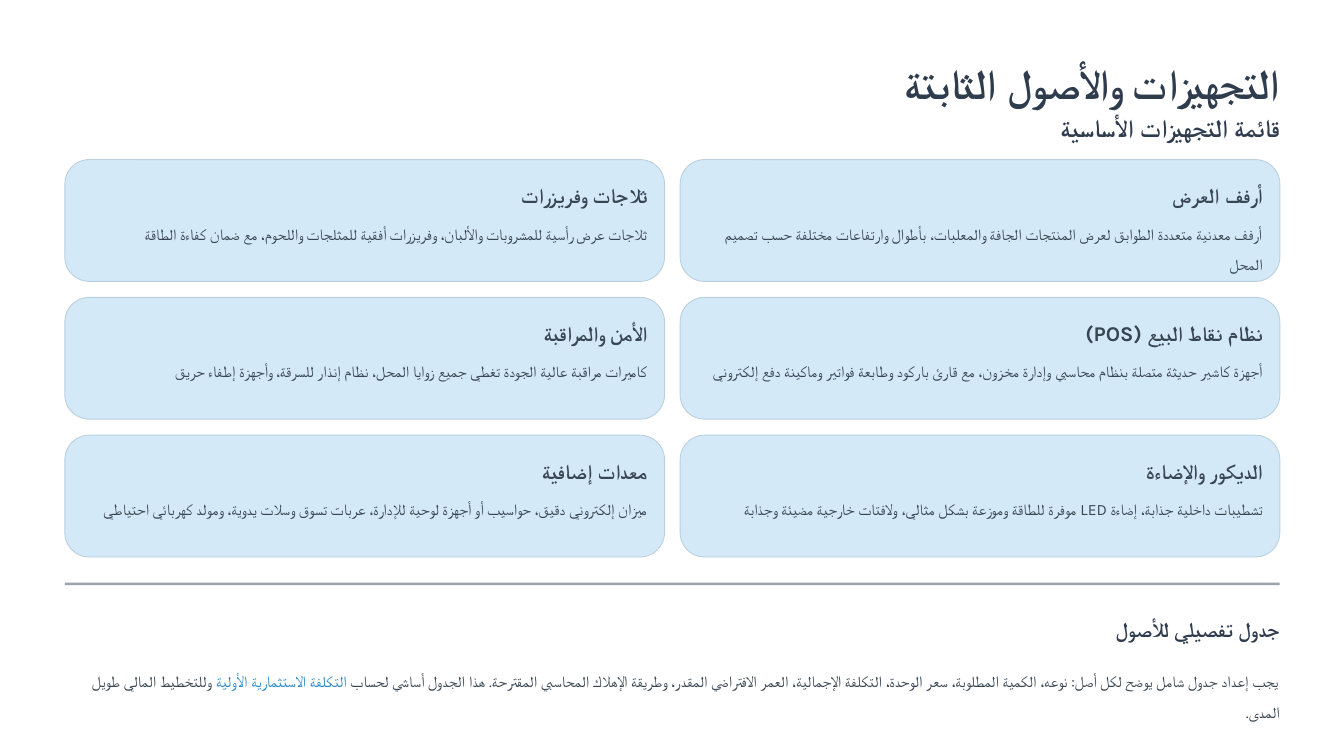
"""Build the fixed assets and equipment slide, laid out right to left."""
from dataclasses import dataclass

from lxml.etree import SubElement
from pptx import Presentation
from pptx.dml.color import RGBColor
from pptx.enum.shapes import MSO_SHAPE as Shape
from pptx.enum.text import MSO_ANCHOR as Anchor, MSO_AUTO_SIZE as AutoSize, PP_ALIGN as Align
from pptx.oxml.ns import qn
from pptx.util import Pt


@dataclass(frozen=True)
class Theme:
    font: str = "Karla"
    heading: RGBColor = RGBColor(0x2E, 0x3C, 0x4E)
    text: RGBColor = RGBColor(0x38, 0x46, 0x53)
    link: RGBColor = RGBColor(0x25, 0x89, 0xC9)
    card: RGBColor = RGBColor(0xD4, 0xE9, 0xF7)
    border: RGBColor = RGBColor(0xBA, 0xCF, 0xDD)
    title_size: float = 36
    subtitle_size: float = 21.5
    label_size: float = 18
    body_size: float = 13.5


THEME = Theme()


def write(box, spans, size, bold=False, spacing=1.25):
    """Fill a box with one right-to-left paragraph of (text, colour) spans."""
    frame = box.text_frame
    frame.word_wrap = True
    frame.auto_size = AutoSize.NONE
    frame.vertical_anchor = Anchor.TOP
    frame.margin_left = frame.margin_right = frame.margin_top = frame.margin_bottom = 0
    para = frame.paragraphs[0]
    para.alignment = Align.RIGHT
    para.line_spacing = spacing
    para.space_before = Pt(0)
    para._p.get_or_add_pPr().set("rtl", "1")
    for text, colour in spans:
        span = para.add_run()
        span.text = text
        span.font.size = Pt(size)
        span.font.bold = bold
        span.font.name = THEME.font
        span.font.color.rgb = colour
        SubElement(span._r.get_or_add_rPr(), qn("a:cs")).set("typeface", THEME.font)


def add_plain_shape(kind, left, top, width, height, colour):
    """Add a filled shape without shadow or outline."""
    shape = page.shapes.add_shape(kind, Pt(left), Pt(top), Pt(width), Pt(height))
    shape.shadow.inherit = False
    shape.fill.solid()
    shape.fill.fore_color.rgb = colour
    shape.line.fill.background()
    return shape


deck = Presentation()
deck.slide_width, deck.slide_height = Pt(1152), Pt(648)
page = deck.slides.add_slide(deck.slide_layouts[5])

LEFT, RIGHT = 55.6, 1097
CARD_WIDTH, CARD_HEIGHT, CARD_TOP = 514, 104.4, 136.8
ROW_STEP = 118.1
PADDING = 14.6
LABEL_WIDTH, LABEL_HEIGHT = 182, 23
BODY_HEIGHT = 44

title = page.shapes.title
title.left, title.top, title.width, title.height = Pt(RIGHT - CARD_WIDTH), Pt(38.2), Pt(CARD_WIDTH), Pt(45.4)
write(title, [("التجهيزات والأصول الثابتة", THEME.heading)], THEME.title_size, True)

subtitle = page.shapes.add_textbox(Pt(RIGHT - 367), Pt(89.3), Pt(367), Pt(27.4))
write(subtitle, [("قائمة التجهيزات الأساسية", THEME.heading)], THEME.subtitle_size, True, 1.26)

equipment = [
    ("أرفف العرض", "أرفف معدنية متعددة الطوابق لعرض المنتجات الجافة والمعلبات، بأطوال وارتفاعات مختلفة حسب تصميم المحل"),
    ("ثلاجات وفريزرات", "ثلاجات عرض رأسية للمشروبات والألبان، وفريزرات أفقية للمثلجات واللحوم، مع ضمان كفاءة الطاقة"),
    ("نظام نقاط البيع (POS)", "أجهزة كاشير حديثة متصلة بنظام محاسبي وإدارة مخزون، مع قارئ باركود وطابعة فواتير وماكينة دفع إلكتروني"),
    ("الأمن والمراقبة", "كاميرات مراقبة عالية الجودة تغطي جميع زوايا المحل، نظام إنذار للسرقة، وأجهزة إطفاء حريق"),
    ("الديكور والإضاءة", "تشطيبات داخلية جذابة، إضاءة LED موفرة للطاقة وموزعة بشكل مثالي، ولافتات خارجية مضيئة وجذابة"),
    ("معدات إضافية", "ميزان إلكتروني دقيق، حواسيب أو أجهزة لوحية للإدارة، عربات تسوق وسلات يدوية، ومولد كهربائي احتياطي"),
]
for index, (label, description) in enumerate(equipment):
    row, column = divmod(index, 2)
    left = LEFT if column else RIGHT - CARD_WIDTH
    top = CARD_TOP + row * ROW_STEP
    inner_right = left + CARD_WIDTH - PADDING
    inner_width = CARD_WIDTH - 2 * PADDING

    card = add_plain_shape(Shape.ROUNDED_RECTANGLE, left, top, CARD_WIDTH, CARD_HEIGHT, THEME.card)
    card.adjustments[0] = 0.2
    card.line.color.rgb = THEME.border
    card.line.width = Pt(0.75)

    label_box = page.shapes.add_textbox(
        Pt(inner_right - LABEL_WIDTH), Pt(top + 14.4), Pt(LABEL_WIDTH), Pt(LABEL_HEIGHT))
    write(label_box, [(label, THEME.text)], THEME.label_size, True)

    description_box = page.shapes.add_textbox(
        Pt(left + PADDING), Pt(top + 45.4), Pt(inner_width), Pt(BODY_HEIGHT))
    write(description_box, [(description, THEME.text)], THEME.body_size, spacing=1.63)

divider = add_plain_shape(Shape.RECTANGLE, LEFT, 499.4, RIGHT - LEFT, 2.25, THEME.text)
divider_colour = divider.fill._xPr.find(qn("a:solidFill"))[0]
SubElement(divider_colour, qn("a:alpha")).set("val", "50000")

table_label = page.shapes.add_textbox(Pt(RIGHT - LABEL_WIDTH), Pt(522.7), Pt(LABEL_WIDTH), Pt(LABEL_HEIGHT))
write(table_label, [("جدول تفصيلي للأصول", THEME.heading)], THEME.label_size, True)

summary = page.shapes.add_textbox(Pt(LEFT), Pt(566), Pt(RIGHT - LEFT), Pt(BODY_HEIGHT))
write(summary, [
    ("يجب إعداد جدول شامل يوضح لكل أصل: نوعه، الكمية المطلوبة، سعر الوحدة، التكلفة الإجمالية، العمر الافتراضي المقدر، "
     "وطريقة الإهلاك المحاسبي المقترحة. هذا الجدول أساسي لحساب ", THEME.text),
    ("التكلفة الاستثمارية الأولية", THEME.link),
    (" وللتخطيط المالي طويل المدى.", THEME.text),
], THEME.body_size, spacing=1.63)

deck.save("out.pptx")
